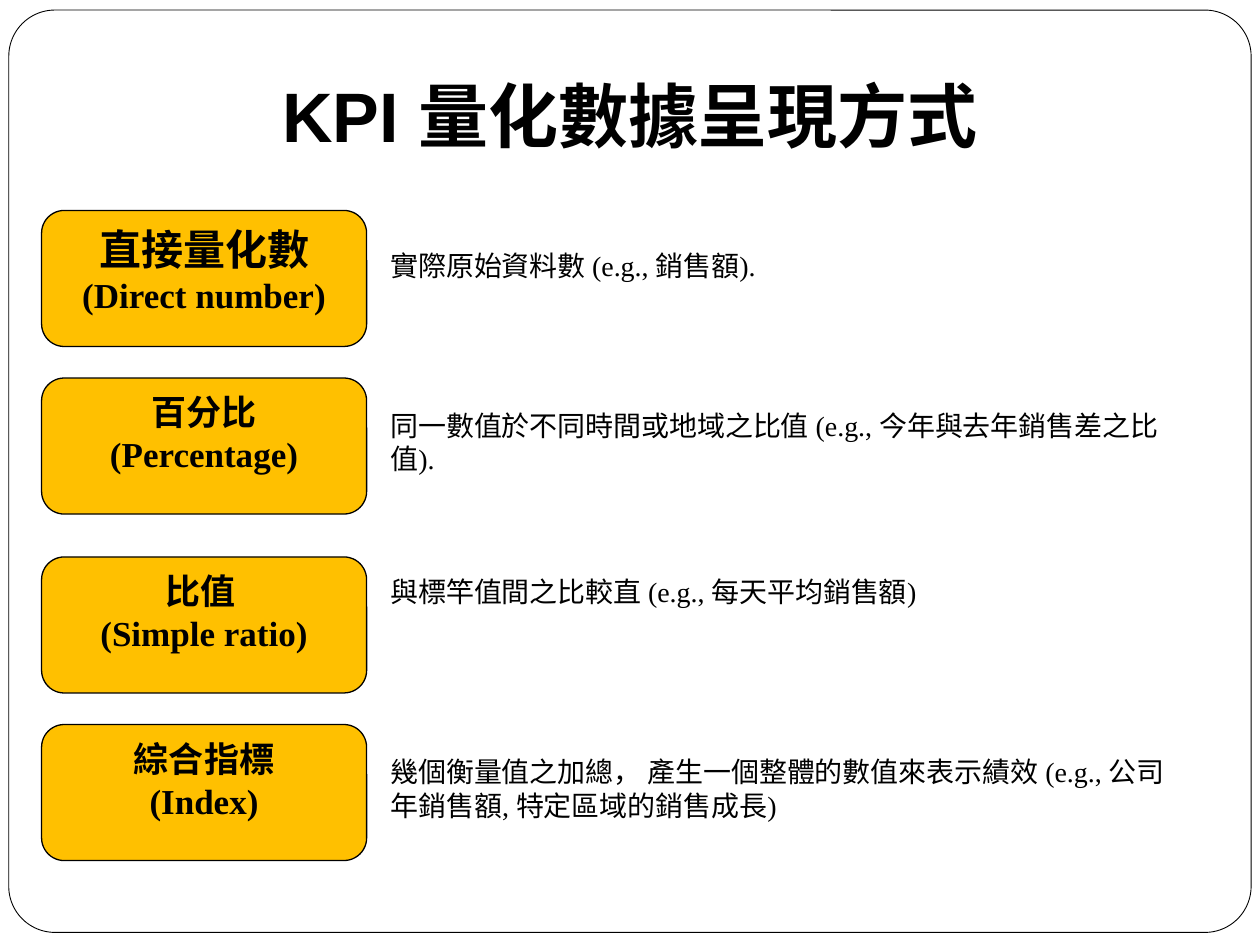
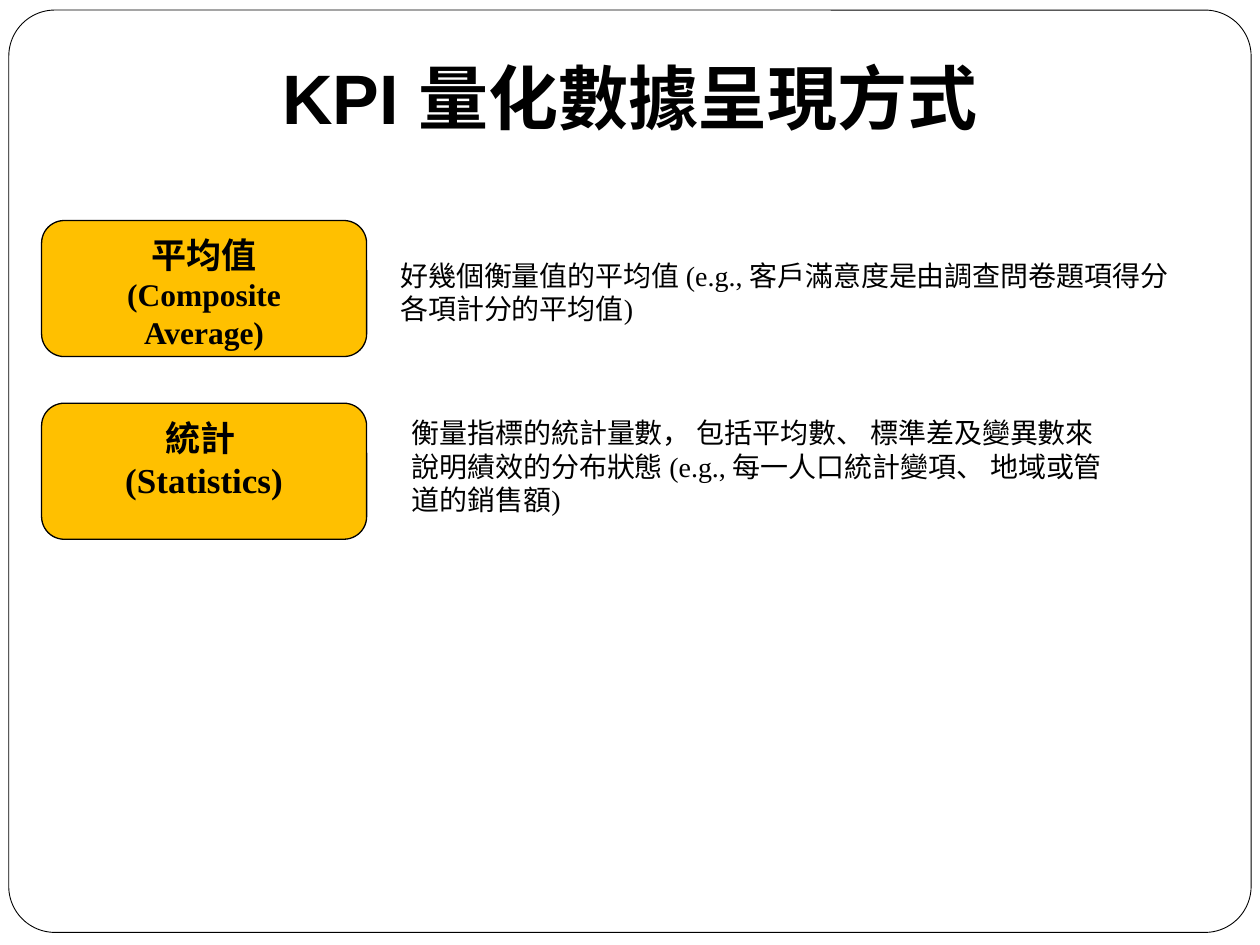
from dataclasses import dataclass

from pptx import Presentation
from pptx.dml.color import RGBColor
from pptx.enum.shapes import MSO_SHAPE as Shape
from pptx.enum.text import MSO_ANCHOR as Anchor
from pptx.enum.text import MSO_AUTO_SIZE as AutoSize
from pptx.enum.text import PP_ALIGN as Align
from pptx.util import Emu, Pt

EMU_PER_PX = 9144


@dataclass(frozen=True)
class Theme:
    ink: str = "000000"
    paper: str = "FFFFFF"
    card: str = "FFC000"
    title_font: str = "Arial"
    body_font: str = "Times New Roman"
    title_size: int = 40
    large_size: int = 24
    label_size: int = 20
    small_size: int = 18
    body_size: int = 16
    frame_line: float = 0.5
    card_line: float = 0.75


THEME = Theme()


@dataclass(frozen=True)
class Box:
    left: int
    top: int
    width: int
    height: int

    def emu(self) -> list:
        return [Emu(n * EMU_PER_PX) for n in (self.left, self.top, self.width, self.height)]


@dataclass(frozen=True)
class Span:
    text: str
    size: int = THEME.label_size


@dataclass(frozen=True)
class Measure:
    card_top: int
    label: tuple
    note: str
    note_left: int
    note_top: int
    note_width: int
    note_lines: int


@dataclass(frozen=True)
class Page:
    title_height: int
    measures: tuple


TITLE = "KPI 量化數據呈現方式"
FRAME = Box(7, 8, 986, 732)
CARD_LEFT, CARD_WIDTH, CARD_HEIGHT = 33, 258, 108
NOTE_PADDING, NOTE_LINE = 10, 27

PAGES = (
    Page(104, (
        Measure(167, ((Span("直接量化數 ", THEME.large_size), Span("(Direct number)")),),
                "實際原始資料數 (e.g., 銷售額).", 300, 192, 633, 1),
        Measure(300, ((Span("百分比(Percentage)"),),),
                "同一數值於不同時間或地域之比值 (e.g., 今年與去年銷售差之比值).",
                300, 319, 658, 2),
        Measure(442, ((Span("比值 "),), (Span("(Simple ratio)"),)),
                "與標竿值間之比較直 (e.g., 每天平均銷售額)", 300, 451, 642, 1),
        Measure(575, ((Span("綜合指標"),), (Span("(Index)"),)),
                "幾個衡量值之加總， 產生一個整體的數值來表示績效 "
                "(e.g., 公司年銷售額, 特定區域的銷售成長)", 300, 594, 650, 2),
    )),
    Page(90, (
        Measure(175, ((Span("平均值"),), (Span("(Composite", THEME.small_size),),
                      (Span("Average)", THEME.small_size),)),
                "好幾個衡量值的平均值 (e.g., 客戶滿意度是由調查問卷題項得分各項計分的平均值)",
                308, 200, 633, 2),
        Measure(320, ((Span("統計 "),), (Span("(Statistics)"),)),
                "衡量指標的統計量數， 包括平均數、 標準差及變異數來說明績效的分布狀態 "
                "(e.g., 每一人口統計變項、 地域或管道的銷售額)", 317, 325, 580, 3),
    )),
)


def apply(target, formats: dict) -> None:
    for name, value in formats.items():
        setattr(target, name, value)


def write(frame, lines: tuple, align: Align, font: str, bold: bool) -> None:
    for index, spans in enumerate(lines):
        para = frame.add_paragraph() if index else frame.paragraphs[0]
        para.alignment = align
        for span in spans:
            run = para.add_run()
            run.text = span.text
            apply(run.font, {"name": font, "size": Pt(span.size), "bold": bold})
            run.font.color.rgb = RGBColor.from_string(THEME.ink)


def add_rounded(page, box: Box, fill: str, line: float):
    shape = page.shapes.add_shape(Shape.ROUNDED_RECTANGLE, *box.emu())
    shape.shadow.inherit = False
    shape.fill.solid()
    shape.fill.fore_color.rgb = RGBColor.from_string(fill)
    shape.line.color.rgb = RGBColor.from_string(THEME.ink)
    shape.line.width = Pt(line)
    return shape


def add_frame(page) -> None:
    frame = add_rounded(page, FRAME, THEME.paper, THEME.frame_line)
    frame.adjustments[0] = 0.05
    page.shapes.element.insert(2, frame.element)


def add_title(page, height: int) -> None:
    title = page.shapes.title
    apply(title, dict(zip(("left", "top", "width", "height"), Box(50, 30, 900, height).emu())))
    apply(title.text_frame, {
        "vertical_anchor": Anchor.BOTTOM,
        "auto_size": AutoSize.NONE,
        "margin_bottom": Emu(10 * EMU_PER_PX),
    })
    write(title.text_frame, ((Span(TITLE, THEME.title_size),),),
          Align.CENTER, THEME.title_font, True)


def add_measure(page, measure: Measure) -> None:
    card_box = Box(CARD_LEFT, measure.card_top, CARD_WIDTH, CARD_HEIGHT)
    card = add_rounded(page, card_box, THEME.card, THEME.card_line)
    apply(card.text_frame, {"vertical_anchor": Anchor.TOP, "word_wrap": True})
    write(card.text_frame, measure.label, Align.CENTER, THEME.body_font, True)

    note_box = Box(measure.note_left, measure.note_top, measure.note_width,
                   NOTE_PADDING + NOTE_LINE * measure.note_lines)
    note = page.shapes.add_textbox(*note_box.emu())
    apply(note.text_frame, {"word_wrap": True, "auto_size": AutoSize.SHAPE_TO_FIT_TEXT})
    write(note.text_frame, ((Span(measure.note, THEME.body_size),),),
          Align.LEFT, THEME.body_font, False)


def main() -> None:
    deck = Presentation()
    apply(deck, {"slide_width": Emu(1000 * EMU_PER_PX), "slide_height": Emu(750 * EMU_PER_PX)})
    for content in PAGES:
        page = deck.slides.add_slide(deck.slide_layouts[5])
        add_frame(page)
        add_title(page, content.title_height)
        for measure in content.measures:
            add_measure(page, measure)
    deck.save("out.pptx")


if __name__ == "__main__":
    main()
